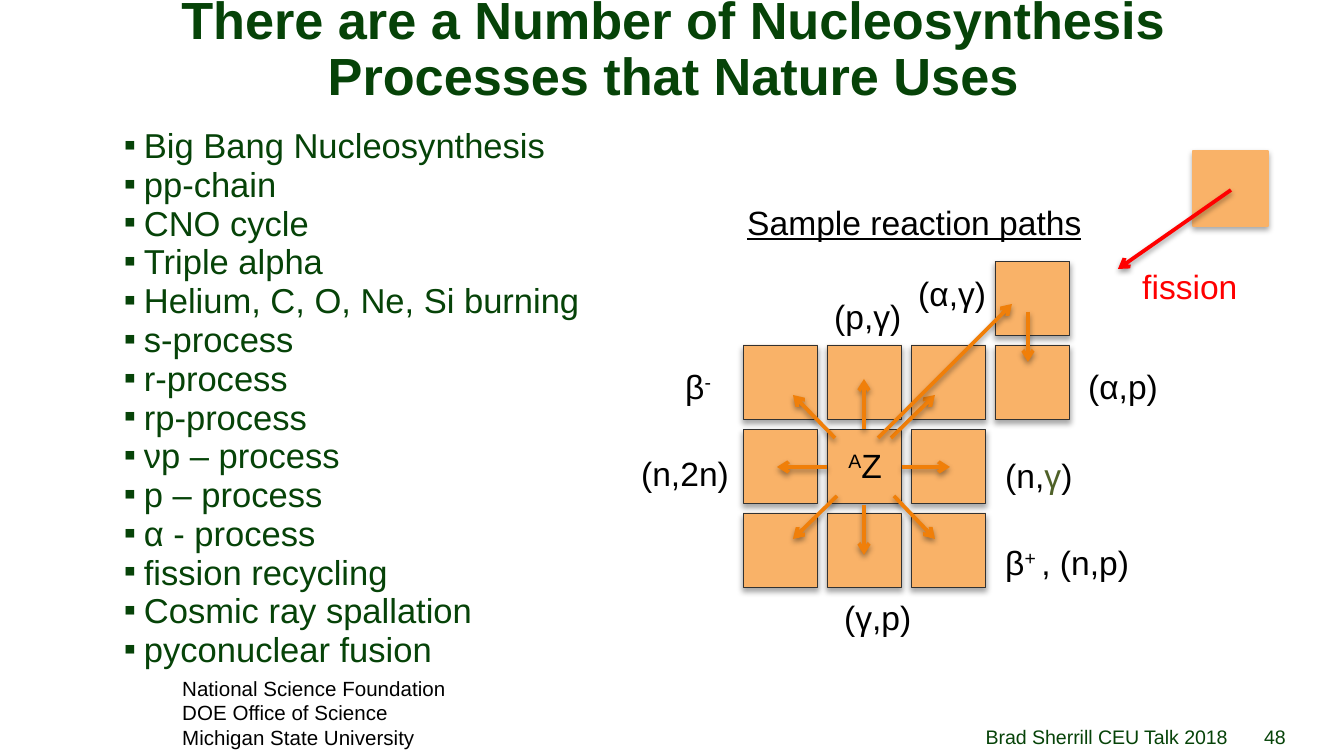
from lxml.etree import SubElement
from pptx import Presentation
from pptx.dml.color import RGBColor
from pptx.enum.shapes import MSO_CONNECTOR, MSO_SHAPE
from pptx.enum.text import MSO_ANCHOR, MSO_AUTO_SIZE, PP_ALIGN
from pptx.oxml.ns import qn
from pptx.util import Emu, Pt

GREEN = RGBColor(0x06, 0x43, 0x08)
OLIVE = RGBColor(0x4F, 0x61, 0x28)
BLACK = RGBColor(0x00, 0x00, 0x00)
RED = RGBColor(0xFF, 0x00, 0x00)
ORANGE = RGBColor(0xF0, 0x7F, 0x09)
PEACH = RGBColor(0xF9, 0xB2, 0x68)
CHARCOAL = RGBColor(0x32, 0x32, 0x32)

PX_PER_INCH = 134.4
CELL, PITCH = 75, 84
GRID_LEFT, GRID_TOP = 743, 261

PROCESSES = [
    "Big Bang Nucleosynthesis", "pp-chain", "CNO cycle", "Triple alpha",
    "Helium, C, O, Ne, Si burning", "s-process", "r-process", "rp-process",
    "νp – process", "p – process", "α - process", "fission recycling",
    "Cosmic ray spallation", "pyconuclear fusion",
]
SPONSORS = ["National Science Foundation", "DOE Office of Science",
            "Michigan State University"]

# Occupied columns in each row of the nuclide chart
NUCLIDE_ROWS = [[3], [0, 1, 2, 3], [0, 1, 2], [0, 1, 2]]

# Reaction arrows: start x, start y, end x, end y
REACTIONS = [
    (891, 438, 935, 395), (864, 429, 864, 379), (835, 438, 793, 395),
    (827, 467, 777, 467), (902, 467, 950, 467), (837, 496, 793, 539),
    (864, 505, 864, 555), (894, 496, 935, 539), (878, 438, 1012, 304),
    (1028, 312, 1028, 362),
]

# Labels: left, top, width, runs of (text, options)
LABELS = [
    (835, 438, 63, [("A", {"raised": True}), ("Z", {})]),
    (1129, 259, 124, [("fission", {"color": RED})]),
    (905, 266, 95, [("(α,γ)", {})]),
    (992, 535, 155, [("β", {}), ("+ ", {"raised": True}), (", (n,p)", {})]),
    (672, 359, 54, [("β", {}), ("-", {"raised": True})]),
    (821, 289, 95, [("(p,γ)", {})]),
    (1075, 359, 98, [("(α,p)", {})]),
    (628, 446, 116, [("(n,2n)", {})]),
    (992, 448, 95, [("(n,", {}), ("γ", {"color": OLIVE}), (")", {})]),
    (831, 590, 95, [("(γ,p)", {})]),
    (734, 195, 364, [("Sample reaction paths", {"underline": True})]),
]


def px(length):
    return Emu(round(length * 914400 / PX_PER_INCH))


def add_run(paragraph, text, size, color=BLACK, bold=False, underline=False, raised=False):
    run = paragraph.add_run()
    run.text = text
    font = run.font
    font.name, font.size, font.bold, font.underline = "Arial", Pt(size), bold, underline
    font.color.rgb = color
    if raised:
        run._r.get_or_add_rPr().set("baseline", "30000")


def set_margins(frame, horizontal, vertical):
    frame.margin_left = frame.margin_right = px(horizontal)
    frame.margin_top = frame.margin_bottom = px(vertical)


def add_text_frame(slide, left, top, width, height, wrap=True):
    frame = slide.shapes.add_textbox(px(left), px(top), px(width), px(height)).text_frame
    frame.word_wrap = wrap
    if not wrap:
        frame.auto_size = MSO_AUTO_SIZE.SHAPE_TO_FIT_TEXT
    return frame


def add_shadow(properties, opacity, distance):
    effects = properties.find(qn("a:effectLst"))
    if effects is None:
        effects = SubElement(properties, qn("a:effectLst"))
    shadow = SubElement(effects, qn("a:outerShdw"), blurRad=str(Pt(3.1)),
                        dist=str(Pt(distance)), dir="5400000", rotWithShape="0")
    color = SubElement(shadow, qn("a:srgbClr"), val="000000")
    SubElement(color, qn("a:alpha"), val=str(opacity * 1000))


def add_nuclide(slide, left, top, line_color=CHARCOAL, line_width=0.5):
    shape = slide.shapes.add_shape(MSO_SHAPE.RECTANGLE, px(left), px(top), px(CELL), px(CELL))
    shape.fill.solid()
    shape.fill.fore_color.rgb = PEACH
    shape.line.color.rgb = line_color
    shape.line.width = Pt(line_width)
    shape.shadow.inherit = False
    add_shadow(shape._element.spPr, 35, 1.8)


def add_arrow(slide, start_x, start_y, end_x, end_y, color=ORANGE):
    arrow = slide.shapes.add_connector(
        MSO_CONNECTOR.STRAIGHT, px(start_x), px(start_y), px(end_x), px(end_y))
    arrow.line.color.rgb = color
    arrow.line.width = Pt(2)
    SubElement(arrow.line._get_or_add_ln(), qn("a:tailEnd"), type="arrow")
    add_shadow(arrow._element.spPr, 38, 1.6)


def add_title(slide, text):
    title = slide.shapes.title
    title.left, title.top, title.width, title.height = px(65), px(-8), px(1216), px(118)
    frame = title.text_frame
    frame.word_wrap = True
    frame.auto_size = MSO_AUTO_SIZE.NONE
    frame.vertical_anchor = MSO_ANCHOR.MIDDLE
    set_margins(frame, 8, 3)
    paragraph = frame.paragraphs[0]
    paragraph.alignment = PP_ALIGN.CENTER
    paragraph.line_spacing = 0.88
    add_run(paragraph, text, 28, GREEN, bold=True)


def add_lines(frame, lines, size, color=BLACK, bulleted=False):
    for index, text in enumerate(lines):
        paragraph = frame.add_paragraph() if index else frame.paragraphs[0]
        if bulleted:
            properties = paragraph._p.get_or_add_pPr()
            properties.set("marL", str(px(20)))
            properties.set("indent", str(px(-20)))
            SubElement(properties, qn("a:buFont"), typeface="Arial")
            SubElement(properties, qn("a:buChar"), char="▪")
            paragraph.line_spacing = 0.8
            paragraph.space_before = Pt(3 if index else 0)
        add_run(paragraph, text, size, color)


def add_footer(slide, left, width, text, alignment):
    frame = add_text_frame(slide, left, 716, width, 40)
    frame.vertical_anchor = MSO_ANCHOR.BOTTOM
    set_margins(frame, 0, 7)
    paragraph = frame.paragraphs[0]
    paragraph.alignment = alignment
    paragraph.line_spacing = 0.9
    add_run(paragraph, text, 10.5, GREEN)


def main():
    presentation = Presentation()
    presentation.slide_width, presentation.slide_height = px(1344), px(756)
    slide = presentation.slides.add_slide(presentation.slide_layouts[5])

    # Title and list of processes
    add_title(slide, "There are a Number of Nucleosynthesis Processes that Nature Uses")
    body = add_text_frame(slide, 124, 132, 1153, 540)
    set_margins(body, 0, 0)
    add_lines(body, PROCESSES, 18.5, GREEN, bulleted=True)

    # Nuclide chart, with the fissioning nuclide apart from it
    for row, columns in enumerate(NUCLIDE_ROWS):
        for column in columns:
            add_nuclide(slide, GRID_LEFT + column * PITCH, GRID_TOP + row * PITCH)
    add_nuclide(slide, 1193, 151, PEACH, 0.75)

    # Reaction paths
    for reaction in REACTIONS:
        add_arrow(slide, *reaction)
    add_arrow(slide, 1231, 190, 1118, 269, RED)
    for left, top, width, runs in LABELS:
        paragraph = add_text_frame(slide, left, top, width, 54, wrap=False).paragraphs[0]
        for text, options in runs:
            add_run(paragraph, text, 18, **options)

    # Footer
    add_lines(add_text_frame(slide, 169, 669, 293, 89, wrap=False), SPONSORS, 11)
    add_footer(slide, 716, 512, "Brad Sherrill CEU Talk 2018", PP_ALIGN.RIGHT)
    add_footer(slide, 1228, 94, "48", PP_ALIGN.CENTER)

    presentation.save("out.pptx")


if __name__ == "__main__":
    main()
